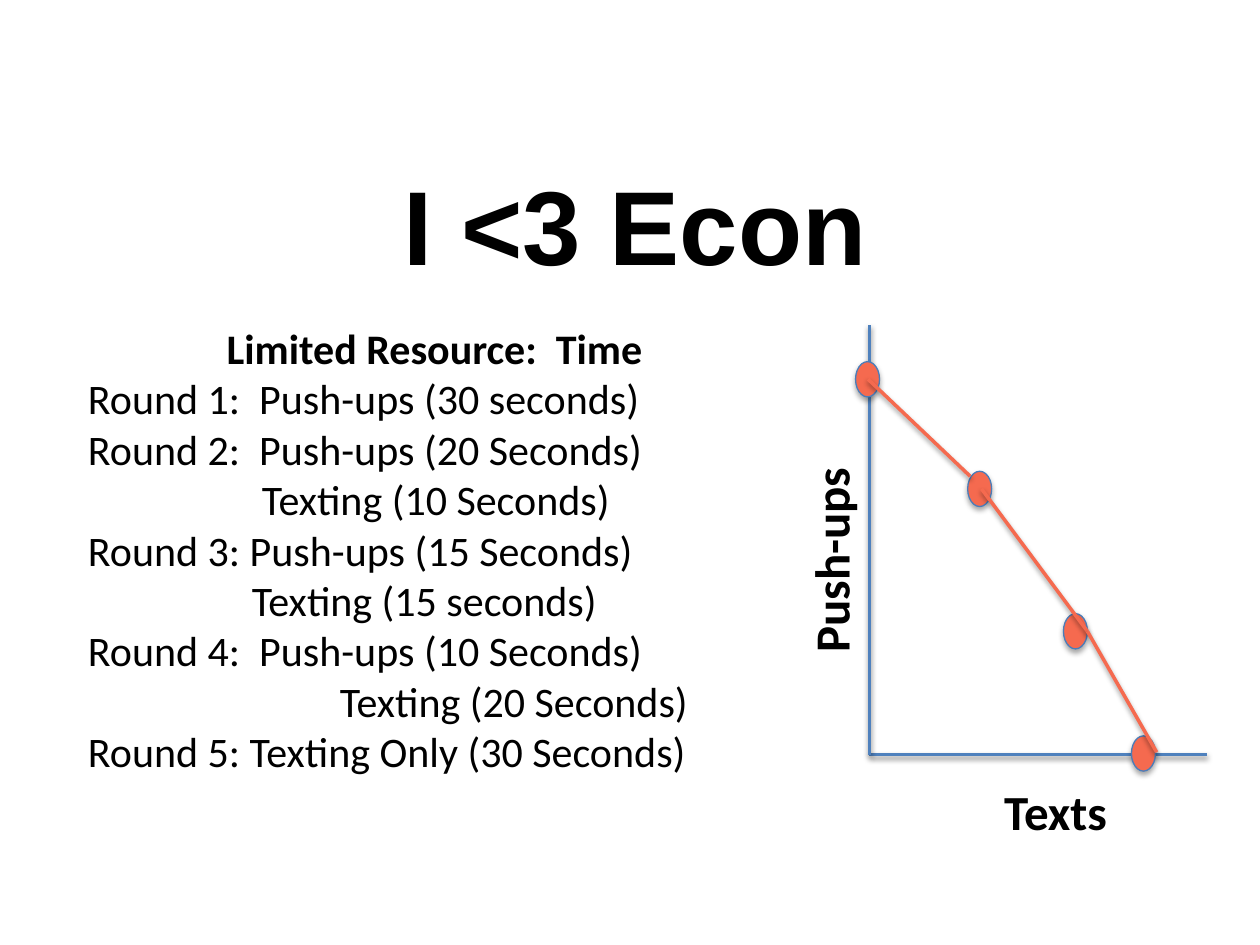
"""Build a slide on the push-ups and texting trade-off with its possibilities curve."""
from lxml.etree import SubElement
from pptx import Presentation
from pptx.dml.color import RGBColor
from pptx.enum.shapes import MSO_CONNECTOR, MSO_SHAPE
from pptx.enum.text import MSO_ANCHOR, PP_ALIGN
from pptx.oxml.ns import qn
from pptx.util import Inches, Pt

COLORS = {"text": "000000", "axis": "4F81BD", "outline": "4A7DBA", "curve": "F56A4F"}

presentation = Presentation()
presentation.slide_width = Inches(10)
presentation.slide_height = Inches(7.5)
slide = presentation.slides.add_slide(presentation.slide_layouts[6])
column = presentation.slide_width / 100
row = presentation.slide_height / 75


def write_text(paragraph, text, size=24, bold=False, font="Calibri",
               align=PP_ALIGN.LEFT, indent=0, line_spacing=1.0):
    paragraph.alignment = align
    paragraph.line_spacing = line_spacing
    paragraph._p.get_or_add_pPr().set("marL", str(int(indent * column)))
    run = paragraph.add_run()
    run.text = text
    run.font.name = font
    run.font.size = Pt(size)
    run.font.bold = bold
    run.font.color.rgb = RGBColor.from_string(COLORS["text"])


def add_shadow(shape, distance, opacity):
    effects = SubElement(shape._element.spPr, qn("a:effectLst"))
    shadow = SubElement(effects, qn("a:outerShdw"), blurRad=str(Pt(3.1)),
                        dist=str(Pt(distance)), dir="5400000", rotWithShape="0")
    color = SubElement(shadow, qn("a:srgbClr"), val=COLORS["text"])
    SubElement(color, qn("a:alpha"), val=str(opacity * 1000))


labels = [
    ("I <3 Econ", (1.3, 10, 98.2, 16.7), 0,
     dict(size=60, bold=True, font="Arial", align=PP_ALIGN.CENTER, line_spacing=0.9)),
    ("Push-ups", (56.8, 42.2, 16.8, 4.3), 270, dict(size=28, bold=True)),
    ("Texts", (78.7, 61.5, 14.9, 5.7), 0, dict(size=28, bold=True)),
]
for text, (left, top, width, height), rotation, text_format in labels:
    box = slide.shapes.add_textbox(int(left * column), int(top * row),
                                   int(width * column), int(height * row))
    box.rotation = rotation
    box.text_frame.word_wrap = True
    if text_format["size"] == 60:
        box.text_frame.vertical_anchor = MSO_ANCHOR.MIDDLE
    write_text(box.text_frame.paragraphs[0], text, **text_format)

rounds = [
    ("Round 1:  Push-ups (30 seconds)", 0),
    ("Round 2:  Push-ups (20 Seconds)", 0),
    ("Texting (10 Seconds)", 13.8),
    ("Round 3: Push-ups (15 Seconds)", 0),
    ("Texting (15 seconds)", 13),
    ("Round 4:  Push-ups (10 Seconds)", 0),
    ("Texting (20 Seconds)", 20),
    ("Round 5: Texting Only (30 Seconds)", 0),
]
rounds_box = slide.shapes.add_textbox(int(6 * column), int(25.1 * row),
                                      int(57 * column), int(49 * row))
rounds_frame = rounds_box.text_frame
rounds_frame.word_wrap = True
write_text(rounds_frame.paragraphs[0], "Limited Resource:  Time",
           bold=True, align=PP_ALIGN.CENTER)
for text, indent in rounds:
    write_text(rounds_frame.add_paragraph(), text, indent=indent)

for left, top in [(67.9, 28.7), (76.8, 37.4), (84.4, 48.7), (89.8, 58.4)]:
    point = slide.shapes.add_shape(MSO_SHAPE.OVAL, int(left * column), int(top * row),
                                   int(1.9 * column), int(2.8 * row))
    point.fill.solid()
    point.fill.fore_color.rgb = RGBColor.from_string(COLORS["curve"])
    point.line.color.rgb = RGBColor.from_string(COLORS["outline"])
    point.line.width = Pt(0.75)
    add_shadow(point, distance=1.8, opacity=35)

lines = [
    ("axis", 69, 25.8, 69, 59.9),
    ("axis", 69, 59.9, 95.8, 59.9),
    ("curve", 68.9, 30.1, 77, 37.8),
    ("curve", 77.9, 38.8, 86.3, 50.1),
    ("curve", 86.3, 50.1, 91.8, 59.7),
]
axis_position = 2
for color, start_x, start_y, end_x, end_y in lines:
    line = slide.shapes.add_connector(MSO_CONNECTOR.STRAIGHT,
                                      int(start_x * column), int(start_y * row),
                                      int(end_x * column), int(end_y * row))
    line.line.color.rgb = RGBColor.from_string(COLORS[color])
    line.line.width = Pt(2)
    add_shadow(line, distance=1.6, opacity=38)
    if color == "axis":
        slide.shapes._spTree.insert(axis_position, line._element)

presentation.save("out.pptx")
